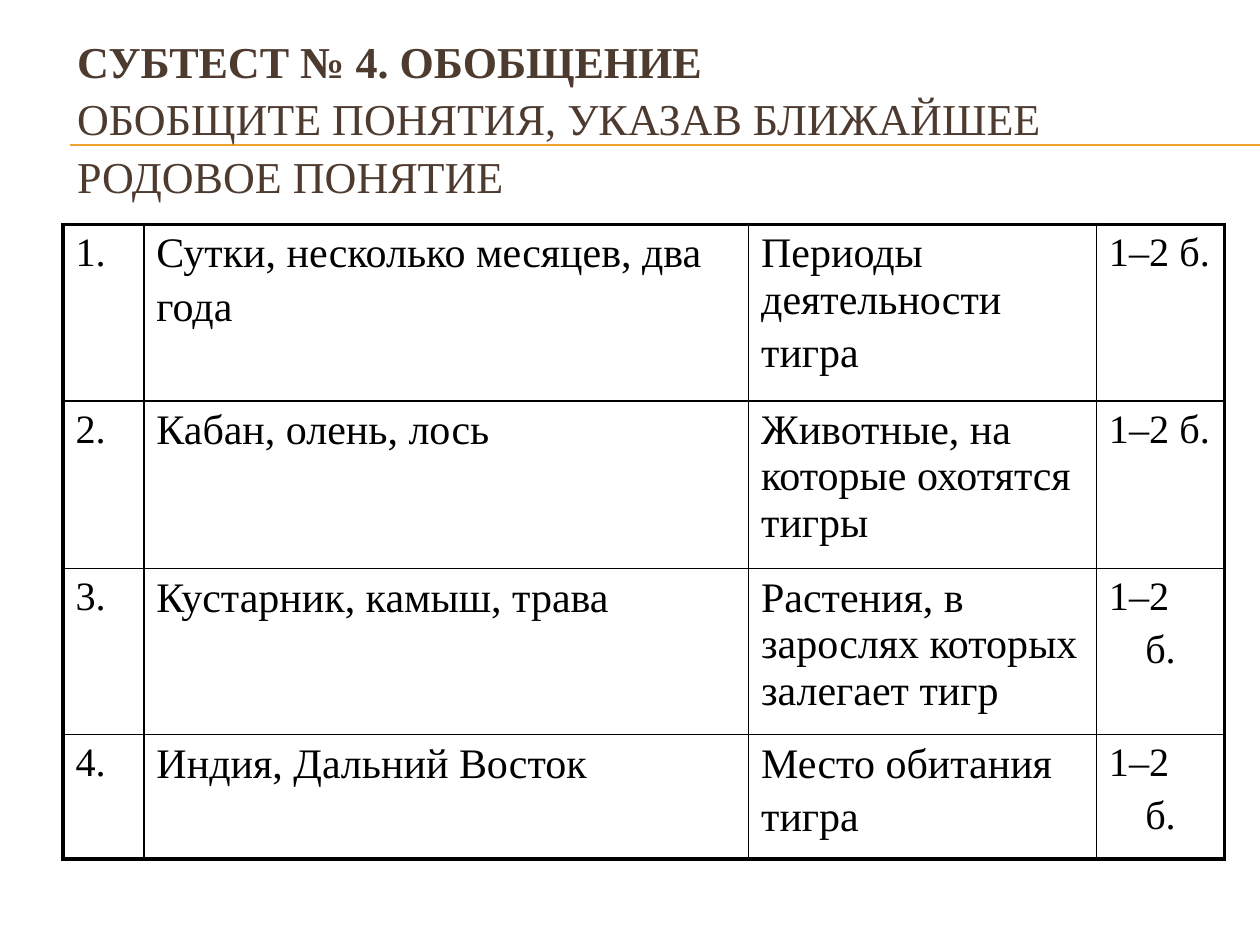
from dataclasses import dataclass

from lxml import etree
from pptx import Presentation
from pptx.dml.color import RGBColor
from pptx.enum.shapes import MSO_CONNECTOR
from pptx.enum.text import MSO_ANCHOR, MSO_AUTO_SIZE, PP_ALIGN
from pptx.oxml.ns import qn
from pptx.util import Cm, Pt


@dataclass(frozen=True)
class Theme:
    serif: str = "Times New Roman"
    sans: str = "Arial"
    heading: str = "4E3B30"
    rule: str = "F0A22E"
    ink: str = "000000"
    heading_size: float = 25.2
    concept_size: float = 24
    mark_size: float = 23
    tail_size: float = 28
    thin: float = 1
    thick: float = 2.25


THEME = Theme()
SLIDE_WIDTH, SLIDE_HEIGHT = 25.4, 19.05
COLUMN_WIDTHS = (1.63, 12.19, 7.01, 2.59)
ROW_HEIGHTS = (3.56, 3.38, 3.35, 2.51)
ITEMS = (
    ("1.", "Сутки, несколько месяцев, два года ", "Периоды деятельности тигра ", "1–2 б."),
    ("2.", "Кабан, олень, лось", "Животные, на которые охотятся тигры", "1–2 б."),
    ("3.", "Кустарник, камыш, трава", "Растения, в зарослях которых залегает тигр", "1–2\nб."),
    ("4.", "Индия, Дальний Восток", "Место обитания тигра ", "1–2\nб."),
)


def set_font(font, size, color):
    font.name = THEME.serif
    font.size = Pt(size)
    font.color.rgb = RGBColor.from_string(color)


def add_rule(slide, y):
    rule = slide.shapes.add_connector(
        MSO_CONNECTOR.STRAIGHT, Cm(1.42), Cm(y), Cm(SLIDE_WIDTH), Cm(y))
    rule.line.color.rgb = RGBColor.from_string(THEME.rule)
    rule.line.width = Pt(0.75)
    etree.SubElement(rule._element.spPr, qn("a:effectLst"))
    slide.shapes._spTree.insert(2, rule._element)


def fill_title(title, subtest, task):
    title.left, title.top, title.width, title.height = Cm(1.3), Cm(0.76), Cm(22.83), Cm(3.15)
    frame = title.text_frame
    frame.word_wrap = True
    frame.auto_size = MSO_AUTO_SIZE.NONE
    frame.vertical_anchor = MSO_ANCHOR.MIDDLE
    heading = frame.paragraphs[0]
    heading.alignment = PP_ALIGN.LEFT
    heading.line_spacing = 1.09
    set_font(heading.font, THEME.heading_size, THEME.heading)
    subtest_run = heading.add_run()
    subtest_run.text = subtest
    subtest_run.font.bold = True
    heading.add_line_break()
    heading.add_run().text = task


def set_border(cell, side, width):
    border = etree.SubElement(
        cell._tc.get_or_add_tcPr(), qn(f"a:ln{side}"), w=str(Pt(width)))
    fill = etree.SubElement(border, qn("a:solidFill"))
    etree.SubElement(fill, qn("a:srgbClr"), val=THEME.ink)


def fill_cell(cell, text, size):
    frame = cell.text_frame
    for index, line in enumerate(text.split("\n")):
        paragraph = frame.add_paragraph() if index else frame.paragraphs[0]
        if index:
            paragraph.alignment = PP_ALIGN.CENTER
            paragraph.space_before = Pt(size * 0.2)
        set_font(paragraph.font, size, THEME.ink)
        paragraph.add_run().text = line.rstrip(" ")
        if line.endswith(" "):
            tail = paragraph.add_run()
            tail.text = " "
            tail.font.name = THEME.sans
            tail.font.size = Pt(THEME.tail_size)


def add_items_table(slide):
    row_count, column_count = len(ROW_HEIGHTS), len(COLUMN_WIDTHS)
    table = slide.shapes.add_table(
        row_count, column_count, Cm(1.27), Cm(4.52),
        Cm(sum(COLUMN_WIDTHS)), Cm(sum(ROW_HEIGHTS))).table
    table.first_row = table.horz_banding = False
    for column, width in zip(table.columns, COLUMN_WIDTHS):
        column.width = Cm(width)
    for row, height in zip(table.rows, ROW_HEIGHTS):
        row.height = Cm(height)
    for r, item in enumerate(ITEMS):
        for c, text in enumerate(item):
            cell = table.cell(r, c)
            outer = {"L": c == 0, "R": c == column_count - 1,
                     "T": r == 0, "B": r == row_count - 1}
            for side, is_outer in outer.items():
                set_border(cell, side, THEME.thick if is_outer else THEME.thin)
            cell.fill.background()
            fill_cell(cell, text, THEME.concept_size if c in (1, 2) else THEME.mark_size)


def main():
    presentation = Presentation()
    presentation.slide_width, presentation.slide_height = Cm(SLIDE_WIDTH), Cm(SLIDE_HEIGHT)
    slide = presentation.slides.add_slide(presentation.slide_layouts[5])
    for y in (2.92, 2.94):
        add_rule(slide, y)
    fill_title(slide.shapes.title, "СУБТЕСТ № 4. ОБОБЩЕНИЕ",
               "ОБОБЩИТЕ ПОНЯТИЯ, УКАЗАВ БЛИЖАЙШЕЕ РОДОВОЕ ПОНЯТИЕ")
    add_items_table(slide)
    presentation.save("out.pptx")


if __name__ == "__main__":
    main()
